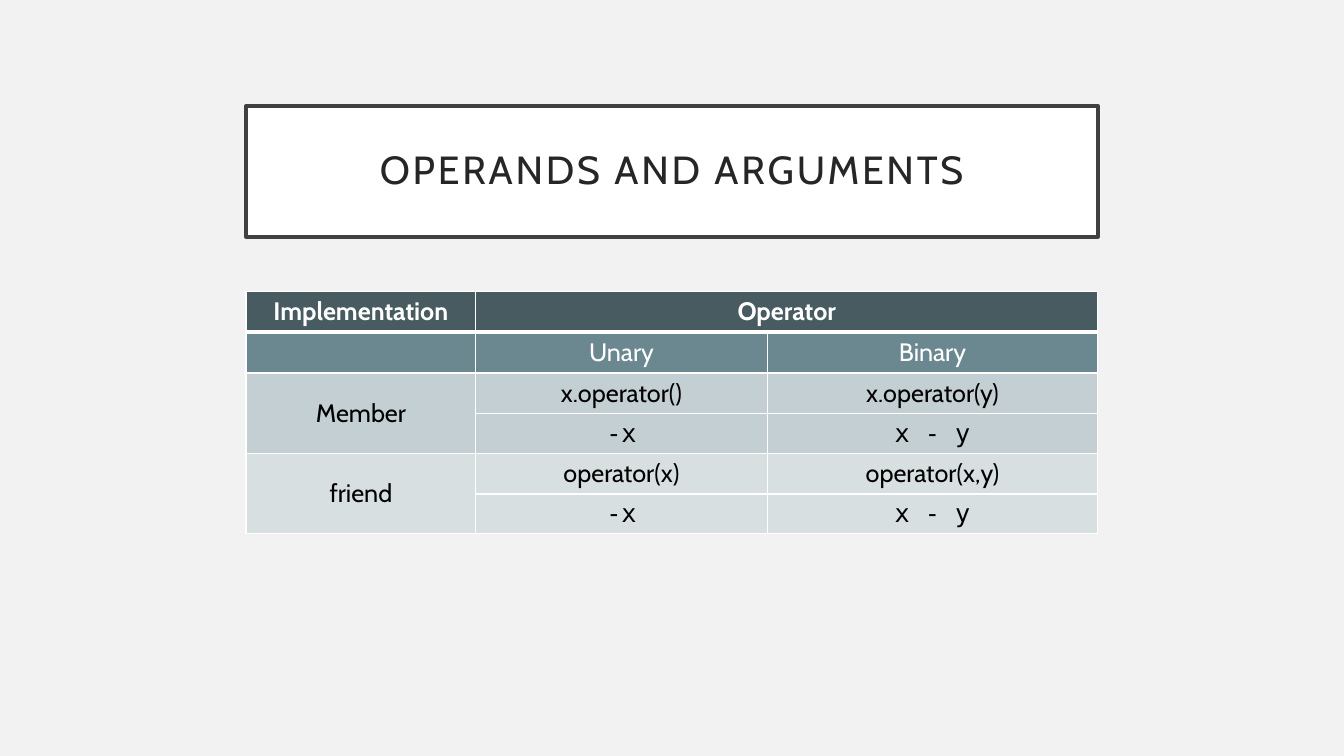
from lxml import etree
from pptx import Presentation
from pptx.dml.color import RGBColor
from pptx.enum import shapes, text
from pptx.oxml.ns import qn
from pptx.util import Pt


def rgb(value):
    return RGBColor.from_string(value)


def add_text(tf, words, size, color, font="Cabin", bold=False):
    p = tf.paragraphs[0]
    p.alignment = text.PP_ALIGN.CENTER
    r = p.add_run()
    r.text = words
    r.font.name, r.font.size, r.font.bold = font, Pt(size), bold
    r.font.color.rgb = rgb(color)
    return r


prs = Presentation()
prs.slide_width, prs.slide_height = Pt(960), Pt(540)
s = prs.slides.add_slide(prs.slide_layouts[6])
s.background.fill.solid()
s.background.fill.fore_color.rgb = rgb("F2F2F2")

# Title box
left, width = 175.7, 608.5
sp = s.shapes.add_shape(shapes.MSO_SHAPE.RECTANGLE, Pt(left), Pt(75.6), Pt(width), Pt(93.6))
sp.shadow.inherit = False
sp.fill.solid()
sp.fill.fore_color.rgb = rgb("FFFFFF")
sp.line.color.rgb = rgb("404040")
sp.line.width = Pt(2.5)
tf = sp.text_frame
tf.word_wrap = True
tf.vertical_anchor = text.MSO_ANCHOR.MIDDLE
tf.margin_left = tf.margin_right = tf.margin_top = tf.margin_bottom = Pt(14.4)
r = add_text(tf, "OPERANDS AND ARGUMENTS", 28, "262626")
r.font._element.set("spc", "200")
tf.paragraphs[0].line_spacing = 0.9

# Table contents: fill, text colour, font of the last two columns, cells
MONO = "DejaVu Sans Mono"
rows = [
    ("475B61", "FFFFFF", "Cabin", ["Implementation", "Operator", ""]),
    ("6B8891", "FFFFFF", "Cabin", ["", "Unary", "Binary"]),
    ("C3CFD3", "000000", "Cabin", ["Member", "x.operator()", "x.operator(y)"]),
    ("C3CFD3", "000000", MONO, ["", "-x", "x - y"]),
    ("D7DFE1", "000000", "Cabin", ["friend", "operator(x)", "operator(x,y)"]),
    ("D7DFE1", "000000", MONO, ["", "-x", "x - y"]),
]
row_height = 28
table = s.shapes.add_table(len(rows), 3, Pt(left), Pt(208), Pt(width),
                           Pt(row_height * len(rows))).table
for column, column_width in zip(table.columns, [164.2, 208.1, 236.2]):
    column.width = Pt(column_width)

for i, (fill, color, font, words) in enumerate(rows):
    table.rows[i].height = Pt(row_height)
    for j, word in enumerate(words):
        cell = table.cell(i, j)
        cell.fill.solid()
        cell.fill.fore_color.rgb = rgb(fill)
        if word:
            add_text(cell.text_frame, word, 18, color, font, bold=i == 0)

        # White borders, thicker under the header row
        tc_pr = cell._tc.get_or_add_tcPr()
        for k, side in enumerate(["lnL", "lnR", "lnT", "lnB"]):
            thick = (i, side) in [(0, "lnB"), (1, "lnT")]
            ln = etree.Element(qn("a:" + side), w=str(Pt(3 if thick else 1)))
            line_fill = etree.SubElement(ln, qn("a:solidFill"))
            etree.SubElement(line_fill, qn("a:srgbClr"), val="FFFFFF")
            tc_pr.insert(k, ln)

# Merged cells
for first, last in [((0, 1), (0, 2)), ((2, 0), (3, 0)), ((4, 0), (5, 0))]:
    cell = table.cell(*first)
    cell.merge(table.cell(*last))
    cell.vertical_anchor = text.MSO_ANCHOR.MIDDLE

prs.save("out.pptx")
